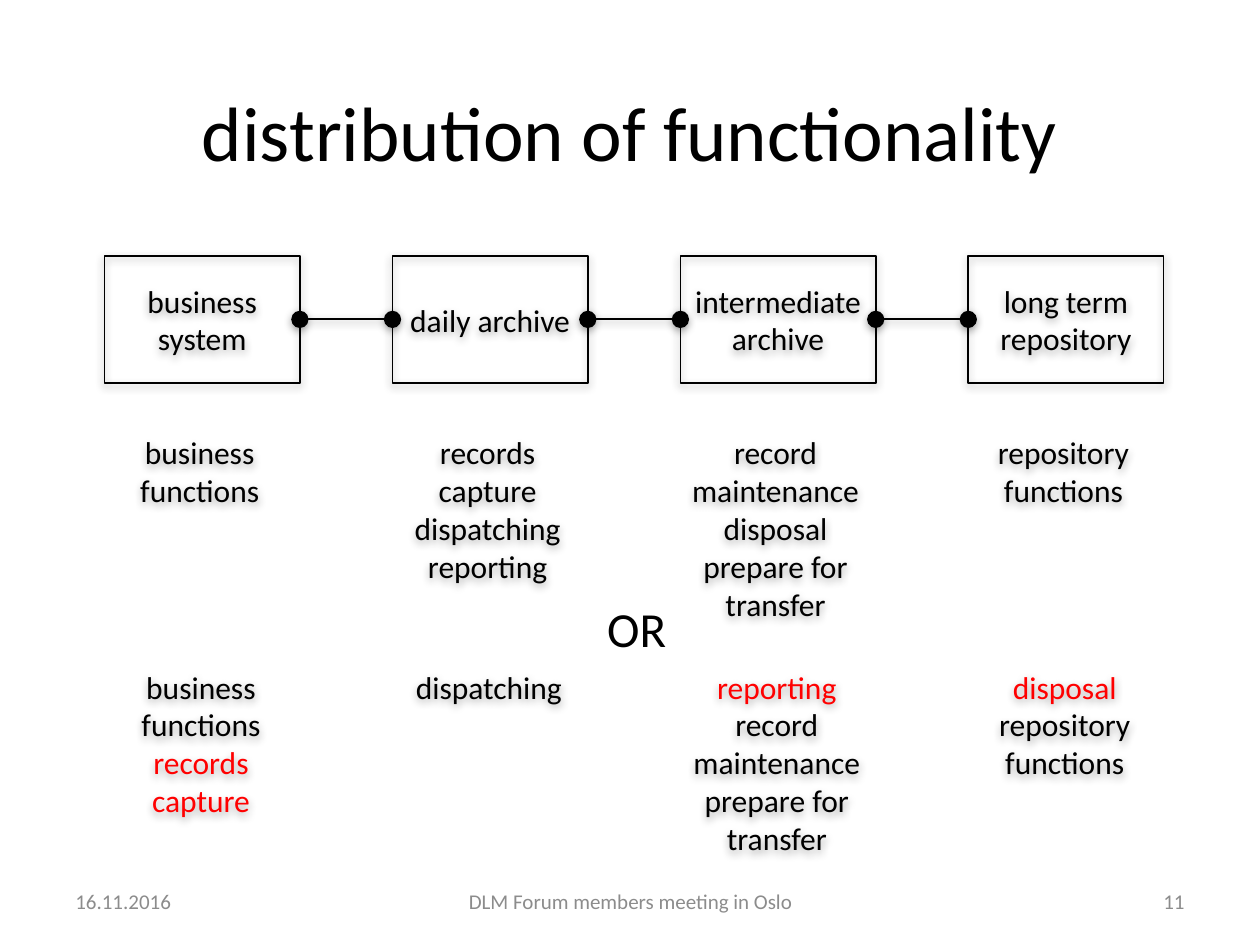
from lxml.etree import SubElement
from pptx import Presentation
from pptx.dml.color import RGBColor
from pptx.enum.shapes import MSO_CONNECTOR, MSO_SHAPE
from pptx.enum.text import MSO_ANCHOR, MSO_AUTO_SIZE, PP_ALIGN
from pptx.oxml.ns import qn
from pptx.util import Inches, Pt

BLACK, RED, GREY = "000000", "FF0000", "8C8C8C"
COLUMN_WIDTH, COLUMN_STEP = 1.55, 2.285

SYSTEMS = ["business system", "daily archive", "intermediate archive", "long term repository"]
FIRST_OPTION = [
    [("business functions", BLACK)],
    [("records capture", BLACK), ("dispatching", BLACK), ("reporting", BLACK)],
    [("record maintenance", BLACK), ("disposal", BLACK), ("prepare for transfer", BLACK)],
    [("repository functions", BLACK)],
]
SECOND_OPTION = [
    [("business functions", BLACK), ("records capture", RED)],
    [("dispatching", BLACK)],
    [("reporting", RED), ("record maintenance", BLACK), ("prepare for transfer", BLACK)],
    [("disposal", RED), ("repository functions", BLACK)],
]


def color(value):
    """Turn a hex string into a colour."""
    return RGBColor.from_string(value)


def write(shape, lines, size, alignment=PP_ALIGN.CENTER, anchor=MSO_ANCHOR.MIDDLE):
    """Write (text, colour) lines into a shape, one paragraph each."""
    frame = shape.text_frame
    frame.word_wrap = True
    frame.vertical_anchor = anchor
    for index, (text, hex_color) in enumerate(lines):
        paragraph = frame.paragraphs[0] if index == 0 else frame.add_paragraph()
        paragraph.alignment = alignment
        run = paragraph.add_run()
        run.text = text
        run.font.name = "Calibri"
        run.font.size = Pt(size)
        run.font.color.rgb = color(hex_color)


def add_text(slide, box, lines, size, alignment=PP_ALIGN.CENTER, anchor=MSO_ANCHOR.MIDDLE):
    """Add a text box at left, top, width, height in inches."""
    shape = slide.shapes.add_textbox(*map(Inches, box))
    write(shape, lines, size, alignment, anchor)
    return shape


def add_shadow(shape, opacity=35, distance=1.8):
    """Give a shape a soft shadow straight below it."""
    properties = shape._element.spPr
    effects = properties.find(qn("a:effectLst"))
    if effects is None:
        effects = SubElement(properties, qn("a:effectLst"))
    shadow = SubElement(effects, qn("a:outerShdw"), blurRad=str(Pt(5)),
                        dist=str(Pt(distance)), dir="5400000", rotWithShape="0")
    tint = SubElement(shadow, qn("a:srgbClr"), val=BLACK)
    SubElement(tint, qn("a:alpha"), val=str(opacity * 1000))


def add_link(slide, start, end, y):
    """Draw a horizontal line with a dot at each end."""
    link = slide.shapes.add_connector(
        MSO_CONNECTOR.STRAIGHT, Inches(start), Inches(y), Inches(end), Inches(y))
    link.line.color.rgb = color(BLACK)
    link.line.width = Pt(1)
    for end_name in ("a:headEnd", "a:tailEnd"):
        SubElement(link.line._get_or_add_ln(), qn(end_name), type="oval", w="lg", len="lg")
    add_shadow(link, 38, 1.6)


def add_chain(slide, left, top, height):
    """Place the row of linked system boxes."""
    for index, name in enumerate(SYSTEMS):
        x = left + index * COLUMN_STEP
        shape = slide.shapes.add_shape(
            MSO_SHAPE.RECTANGLE, *map(Inches, (x, top, COLUMN_WIDTH, height)))
        shape.shadow.inherit = False
        shape.fill.background()
        shape.line.color.rgb = color(BLACK)
        shape.line.width = Pt(1)
        add_shadow(shape)
        write(shape, [(name, BLACK)], 18)
    for index in range(len(SYSTEMS) - 1):
        x = left + index * COLUMN_STEP
        add_link(slide, x + COLUMN_WIDTH, x + COLUMN_STEP, top + height / 2)


def add_option(slide, left, top, height, columns):
    """Place one row of function lists below the systems."""
    for index, lines in enumerate(columns):
        box = (left + index * COLUMN_STEP, top, COLUMN_WIDTH, height)
        add_shadow(add_text(slide, box, lines, 18, anchor=MSO_ANCHOR.TOP))


def add_title(slide, box):
    """Move and fill the title placeholder."""
    title = slide.shapes.title
    title.left, title.top, title.width, title.height = map(Inches, box)
    write(title, [("distribution of functionality", BLACK)], 44)


def add_footer(slide, top, height):
    """Place the date, event name and slide number."""
    for left, width, text, alignment in (
        (0.5, 2.33, "16.11.2016", PP_ALIGN.LEFT),
        (3.19, 3.63, "DLM Forum members meeting in Oslo", PP_ALIGN.CENTER),
        (7.17, 2.33, "11", PP_ALIGN.RIGHT),
    ):
        add_text(slide, (left, top, width, height), [(text, GREY)], 12, alignment)


def add_divider(slide, box):
    """Place the word between the two options."""
    shape = add_text(slide, box, [("OR", BLACK)], 28, PP_ALIGN.LEFT, MSO_ANCHOR.TOP)
    shape.text_frame.word_wrap = False
    shape.text_frame.auto_size = MSO_AUTO_SIZE.SHAPE_TO_FIT_TEXT


def main():
    """Build and save the slide."""
    presentation = Presentation()
    presentation.slide_width, presentation.slide_height = Inches(10), Inches(7.5)
    slide = presentation.slides.add_slide(presentation.slide_layouts[5])
    add_title(slide, (0.5, 0.52, 9, 1.03))
    add_chain(slide, 0.83, 2.03, 1.01)
    add_option(slide, 0.81, 3.39, 1.57, FIRST_OPTION)
    add_option(slide, 0.82, 5.25, 1.57, SECOND_OPTION)
    add_divider(slide, (4.72, 4.7, 0.68, 0.57))
    add_footer(slide, 6.95, 0.4)
    presentation.save("out.pptx")


if __name__ == "__main__":
    main()
